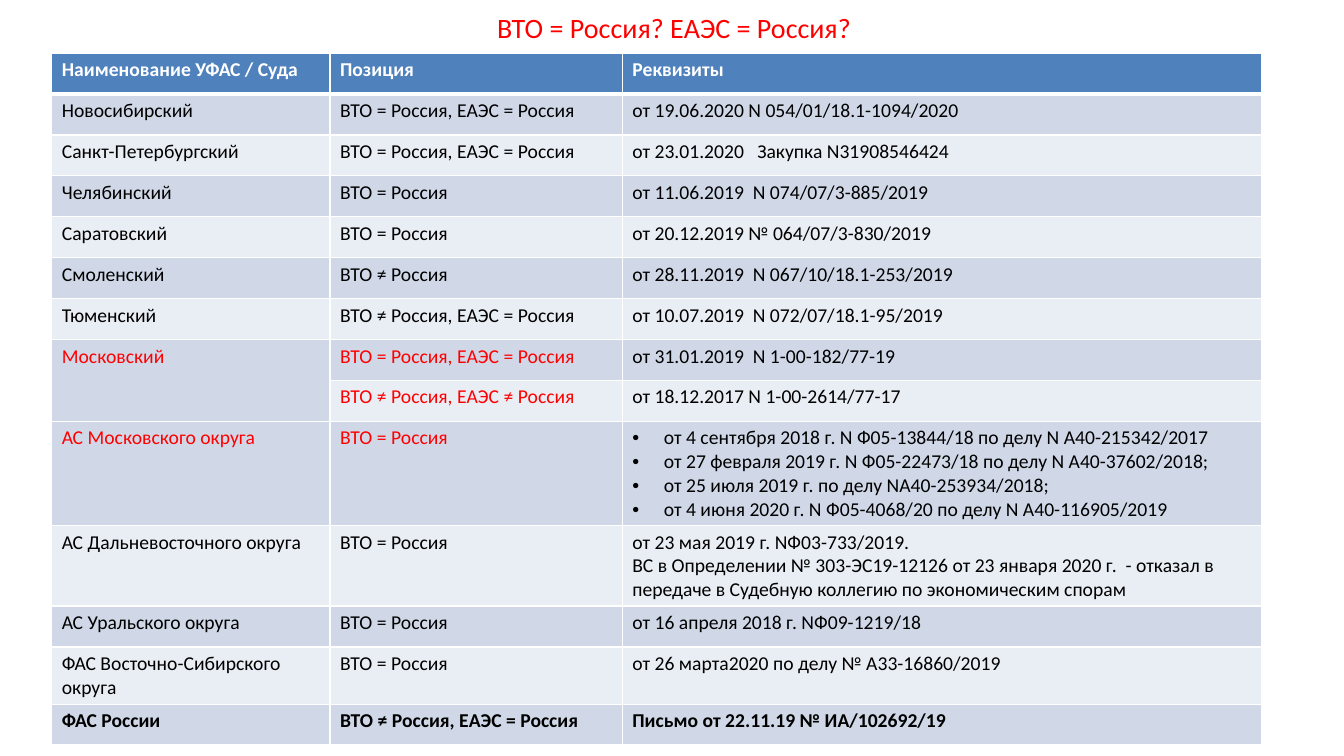
import dataclasses

import lxml.etree
import pptx
import pptx.dml.color
import pptx.enum.text
import pptx.oxml.ns
import pptx.util

Pt = pptx.util.Pt
qn = pptx.oxml.ns.qn


@dataclasses.dataclass(frozen=True)
class Theme:
    font: str = "Calibri"
    title_size: int = 20
    table_size: int = 14
    accent: str = "FF0000"
    ink: str = "000000"
    white: str = "FFFFFF"
    header: str = "4F81BD"
    bands: tuple = ("E9EDF4", "D0D8E8")
    rule: int = 1
    header_rule: int = 3


THEME = Theme()
TITLE = "ВТО = Россия? ЕАЭС = Россия?"
EQUAL = "ВТО = Россия"
UNEQUAL = "ВТО ≠ Россия"
BOTH_EQUAL = "ВТО = Россия, ЕАЭС = Россия"
EAEU_ONLY = "ВТО ≠ Россия, ЕАЭС = Россия"

# Each row: authority, position, list of decisions
ROWS = [
    ("Наименование УФАС / Суда", "Позиция", ["Реквизиты"]),
    ("Новосибирский", BOTH_EQUAL, ["от 19.06.2020 N 054/01/18.1-1094/2020"]),
    ("Санкт-Петербургский", BOTH_EQUAL, ["от 23.01.2020   Закупка N31908546424"]),
    ("Челябинский", EQUAL, ["от 11.06.2019  N 074/07/3-885/2019"]),
    ("Саратовский", EQUAL, ["от 20.12.2019 № 064/07/3-830/2019"]),
    ("Смоленский", UNEQUAL, ["от 28.11.2019  N 067/10/18.1-253/2019"]),
    ("Тюменский", EAEU_ONLY, ["от 10.07.2019  N 072/07/18.1-95/2019"]),
    ("Московский", BOTH_EQUAL, ["от 31.01.2019  N 1-00-182/77-19"]),
    (None, "ВТО ≠ Россия, ЕАЭС ≠ Россия", ["от 18.12.2017 N 1-00-2614/77-17"]),
    ("АС Московского округа", EQUAL, [
        "от 4 сентября 2018 г. N Ф05-13844/18 по делу N А40-215342/2017",
        "от 27 февраля 2019 г. N Ф05-22473/18 по делу N А40-37602/2018;",
        "от 25 июля 2019 г. по делу NА40-253934/2018;",
        "от 4 июня 2020 г. N Ф05-4068/20 по делу N А40-116905/2019"]),
    ("АС Дальневосточного округа", EQUAL, [
        "от 23 мая 2019 г. NФ03-733/2019.",
        "ВС в Определении № 303-ЭС19-12126 от 23 января 2020 г.  - отказал в "
        "передаче в Судебную коллегию по экономическим спорам"]),
    ("АС Уральского округа", EQUAL, ["от 16 апреля 2018 г. NФ09-1219/18"]),
    ("ФАС Восточно-Сибирского округа", EQUAL,
     ["от 26 марта2020 по делу № А33-16860/2019"]),
    ("ФАС России", EAEU_ONLY, ["Письмо от 22.11.19 № ИА/102692/19"]),
]
MOSCOW_FIRST, MOSCOW_SECOND, MOSCOW_DISTRICT = 7, 8, 9
LAST = len(ROWS) - 1
COLUMN_SHARES = (2.76, 2.9, 6.34)


def add_run(paragraph, text, size, color, bold=False):
    run = paragraph.add_run()
    run.text = text
    run.font.name = THEME.font
    run.font.size = Pt(size)
    run.font.bold = bold
    run.font.color.rgb = pptx.dml.color.RGBColor.from_string(color)


def add_bullet(paragraph, indent):
    properties = paragraph._p.get_or_add_pPr()
    properties.set("marL", str(Pt(indent)))
    properties.set("indent", str(-Pt(indent)))
    lxml.etree.SubElement(properties, qn("a:buFont")).set("typeface", "Arial")
    lxml.etree.SubElement(properties, qn("a:buChar")).set("char", "•")


def add_borders(cell, row):
    properties = cell._tc.get_or_add_tcPr()
    heavy = {0: "lnB", 1: "lnT"}.get(row)
    for side in ("lnL", "lnR", "lnT", "lnB"):
        width = THEME.header_rule if side == heavy else THEME.rule
        line = lxml.etree.SubElement(properties, qn(f"a:{side}"), w=str(Pt(width)))
        fill = lxml.etree.SubElement(line, qn("a:solidFill"))
        lxml.etree.SubElement(fill, qn("a:srgbClr")).set("val", THEME.white)


def fill_cell(cell, row, column, lines):
    add_borders(cell, row)
    cell.fill.solid()
    fill = THEME.header if row == 0 else THEME.bands[row % 2]
    cell.fill.fore_color.rgb = pptx.dml.color.RGBColor.from_string(fill)

    disputed = MOSCOW_FIRST <= row <= MOSCOW_DISTRICT and column < 2
    color = THEME.white if row == 0 else THEME.accent if disputed else THEME.ink
    for index, line in enumerate(lines):
        frame = cell.text_frame
        paragraph = frame.add_paragraph() if index else frame.paragraphs[0]
        if row == MOSCOW_DISTRICT and column == 2:
            add_bullet(paragraph, 22.5)
        add_run(paragraph, line, THEME.table_size, color, row in (0, LAST))


def add_title(slide, left, top, width, height):
    frame = slide.shapes.add_textbox(Pt(left), Pt(top), Pt(width), Pt(height)).text_frame
    frame.word_wrap = True
    frame.vertical_anchor = pptx.enum.text.MSO_ANCHOR.MIDDLE
    heading = frame.paragraphs[0]
    heading.alignment = pptx.enum.text.PP_ALIGN.CENTER
    add_run(heading, TITLE, THEME.title_size, THEME.accent)


def add_positions_table(slide, left, top, width, row_height):
    positions = slide.shapes.add_table(
        len(ROWS), len(COLUMN_SHARES), Pt(left), Pt(top),
        Pt(width), Pt(row_height * len(ROWS))).table
    for column, share in zip(positions.columns, COLUMN_SHARES):
        column.width = Pt(width * share / sum(COLUMN_SHARES))
    for row, (authority, position, decisions) in enumerate(ROWS):
        positions.rows[row].height = Pt(row_height)
        names = [authority] if authority else []
        for column, lines in enumerate((names, [position], decisions)):
            fill_cell(positions.cell(row, column), row, column, lines)
    # One authority with two opposite positions
    positions.cell(MOSCOW_FIRST, 0).merge(positions.cell(MOSCOW_SECOND, 0))


def main():
    deck = pptx.Presentation()
    deck.slide_width, deck.slide_height = Pt(960), Pt(540)
    slide = deck.slides.add_slide(deck.slide_layouts[6])
    add_title(slide, 49.5, 11.5, 864, 16)
    add_positions_table(slide, 37, 38, 864, 29.2)
    deck.save("out.pptx")


if __name__ == "__main__":
    main()
